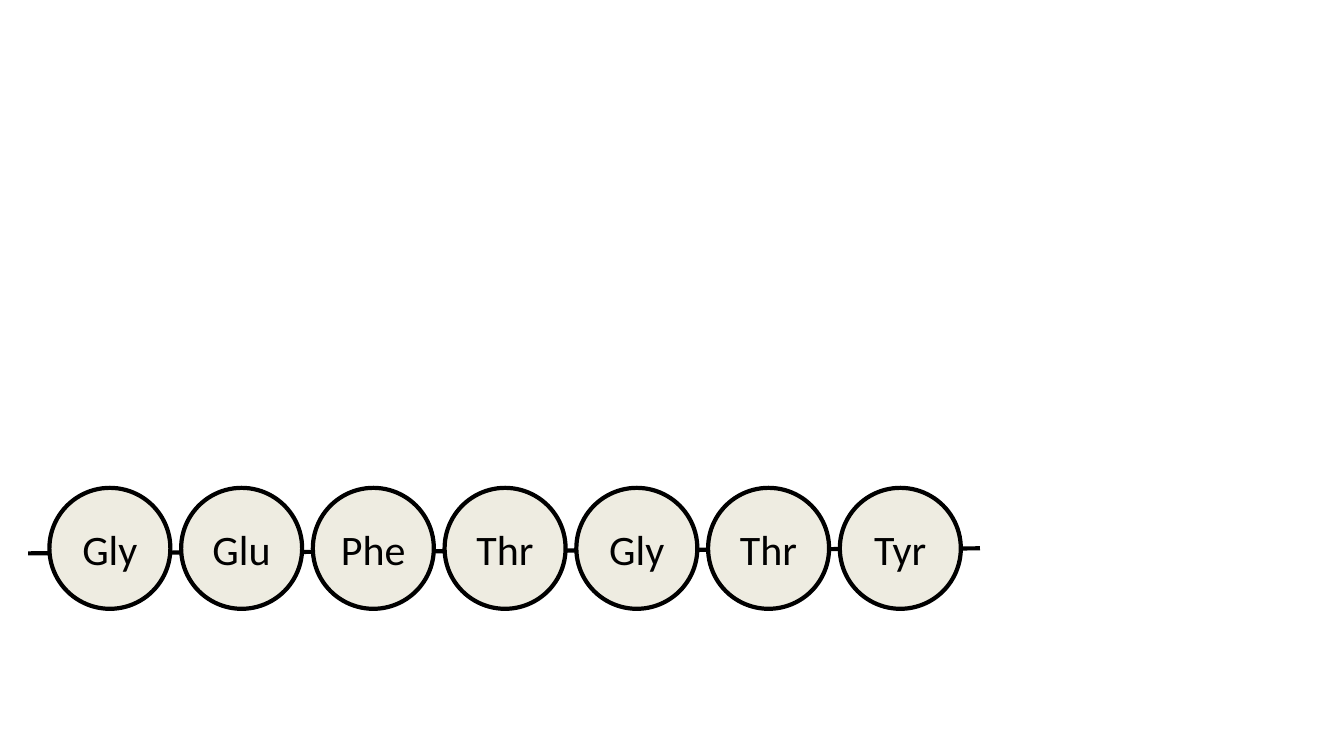
from pptx import Presentation
from pptx.dml.color import RGBColor
from pptx.enum.shapes import MSO_CONNECTOR, MSO_SHAPE
from pptx.enum.text import MSO_ANCHOR, PP_ALIGN
from pptx.oxml.ns import qn
from pptx.util import Inches, Pt
from lxml import etree

CIRCLE = MSO_SHAPE.FLOWCHART_CONNECTOR
STRAIGHT = MSO_CONNECTOR.STRAIGHT
MIDDLE = MSO_ANCHOR.MIDDLE
CENTER = PP_ALIGN.CENTER

BLACK = RGBColor(0x00, 0x00, 0x00)
BEIGE = RGBColor(0xEE, 0xEC, 0xE1)

RESIDUES = ["Gly", "Glu", "Phe", "Thr", "Gly", "Thr", "Tyr"]
FIRST_LEFT, LAST_LEFT, TOP, DIAMETER = 0.49, 8.33, 4.84, 1.2


class PeptideSlide:
    font = "Calibri"
    font_size = Pt(30)
    line_width = Pt(3)

    def __init__(self, slide):
        self.slide = slide

    def outline(self, line):
        line.color.rgb = BLACK
        line.width = self.line_width

    def backbone(self, x1, y1, x2, y2):
        line = self.slide.shapes.add_connector(
            STRAIGHT, Inches(x1), Inches(y1), Inches(x2), Inches(y2))
        self.outline(line.line)
        etree.SubElement(line._element.spPr, qn("a:effectLst"))

    def residue(self, left, top, diameter, name):
        sp = self.slide.shapes.add_shape(
            CIRCLE, Inches(left), Inches(top), Inches(diameter), Inches(diameter))
        sp.shadow.inherit = False
        sp.fill.solid()
        sp.fill.fore_color.rgb = BEIGE
        self.outline(sp.line)
        tf = sp.text_frame
        tf.text = name
        tf.word_wrap = True
        tf.vertical_anchor = MIDDLE
        tf.margin_left = tf.margin_right = 0
        p = tf.paragraphs[0]
        p.alignment = CENTER
        font = p.runs[0].font
        font.name = self.font
        font.size = self.font_size
        font.color.rgb = BLACK


def main():
    prs = Presentation()
    prs.slide_width, prs.slide_height = Inches(13.33), Inches(7.5)
    peptide = PeptideSlide(prs.slides.add_slide(prs.slide_layouts[6]))

    peptide.backbone(0.28, 5.49, 9.72, 5.44)
    pitch = (LAST_LEFT - FIRST_LEFT) / (len(RESIDUES) - 1)
    for i, name in enumerate(RESIDUES):
        peptide.residue(FIRST_LEFT + i * pitch, TOP, DIAMETER, name)

    prs.save("out.pptx")


if __name__ == "__main__":
    main()
